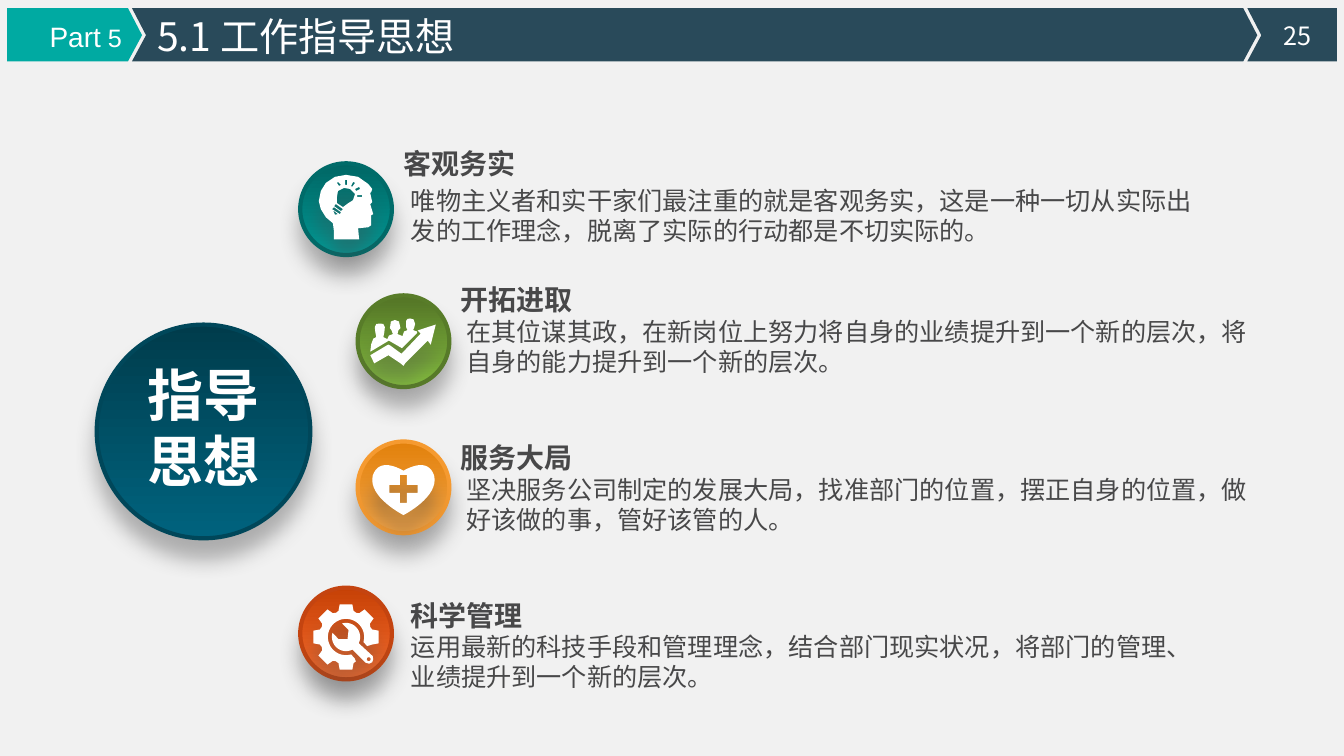
"""Build the slide 5.1 on the guiding ideas of the work."""
from math import cos, radians, sin

from lxml import etree
from pptx import Presentation
from pptx import util as u
from pptx.dml.color import RGBColor
from pptx.enum import shapes, text
from pptx.oxml.ns import qn

WIDTH, HEIGHT = 13.34, 7.5
WHITE, INK, TEAL, NAVY, PAPER = "FFFFFF", "484849", "00AAA2", "294A5A", "F1F1F1"
SANS = "Noto Sans CJK SC"
TOP, MIDDLE, BOTTOM = 0.08, 0.35, 0.61
BADGE = 0.91
BODY_BOX, HEADING_BOX = (8.04, 0.71), (2.18, 0.44)

HEADER = [
    (TEAL, [(0.07, TOP), (1.27, TOP), (1.41, MIDDLE), (1.27, BOTTOM), (0.07, BOTTOM)]),
    (NAVY, [(1.31, TOP), (12.34, TOP), (12.48, MIDDLE), (12.34, BOTTOM),
            (1.31, BOTTOM), (1.45, MIDDLE)]),
    (NAVY, [(12.38, TOP), (13.27, TOP), (13.27, BOTTOM), (12.38, BOTTOM), (12.52, MIDDLE)]),
]


def arc(radius, start, end, x=0, y=0, step=6):
    """Return points along a clockwise or anticlockwise arc."""
    count = max(2, round(abs(end - start) / step))
    angles = [radians(start + (end - start) * i / count) for i in range(count + 1)]
    return [(x + radius * cos(a), y + radius * sin(a)) for a in angles]


def bezier(a, b, c, d, count=16):
    """Return points along a cubic curve."""
    shares = [i / count for i in range(count + 1)]
    return [tuple((1 - t) ** 3 * p + 3 * t * (1 - t) ** 2 * q + 3 * t * t * (1 - t) * r + t ** 3 * s
                  for p, q, r, s in zip(a, b, c, d)) for t in shares]


def heart():
    """Return a heart with a cross cut out of it."""
    right = bezier((0, -16.5), (3.5, -18.5), (24.5, -30.5), (30.5, -11.5))
    right += bezier((30.5, -11.5), (35.5, 9.5), (0, 27.5), (0, 27.5))
    left = [(-x, y) for x, y in reversed(right)]
    cross = [(14, 5.5), (3.5, 5.5), (3.5, 15.5), (-3.5, 15.5), (-3.5, 5.5), (-14, 5.5),
             (-14, -2.5), (-3.5, -2.5), (-3.5, -12.5), (3.5, -12.5), (3.5, -2.5), (14, -2.5)]
    return [right + left, cross]


def gear():
    """Return a gear, open at lower right, around a wrench."""
    tooth = [(-22, 26), (-16, 27), (-11, 33), (11, 33), (16, 27)]
    rim = [(r * cos(radians(a + turn)), r * sin(radians(a + turn)))
           for turn in range(90, 361, 45) for a, r in tooth]
    wheel = rim + [(21, 9)] + arc(18, 16, -286) + [(8.5, 21)]
    wrench = ([(26.5, 19)] + arc(14, 26, -106)
              + [(2.5, -7), (1.5, 2), (-7.5, 2)] + arc(14, 197, 63)
              + [(19.5, 25.5), (23, 26.5), (26, 25), (27, 22)])
    return [[(x, y + 3.5) for x, y in part]
            for part in (wheel, wrench, arc(2, 0, 360, 22.5, 22, 30))]


HEAD = [
    [(-12, 30), (-12, 22), (-13, 14), (-20, 8), (-25, 0), (-27, -8), (-25, -18), (-20, -26),
     (-11, -32), (0, -34), (12, -32), (22, -25), (26, -20), (25, -17), (24, -16), (26, -7),
     (24, -5), (27, 5), (25, 6), (25, 16), (22, 18), (12, 19), (13, 30)],
    [(4, -20), (-2, -21), (-8, -18), (-9, -12), (-9, -6), (-3, -2), (1, -5), (7, -9), (9, -15)],
    [(-10, -5), (-3, 0), (-5, 2), (-12, -3)],
    [(-12, -2), (-5, 3), (-6, 5), (-14, 0)],
    [(-13, 1), (-8, 5), (-11, 5.5)],
    [(6, -22), (9, -26), (7, -27), (5, -23)],
    [(10, -18), (14, -20), (13, -22), (9, -20)],
    [(1, -24), (1, -29), (-1, -29), (-1, -24)],
    [(-5, -24), (-8, -27), (-9, -26), (-7, -23)],
    [(11, -12), (16, -12), (16, -14), (11, -14)],
]
GROWTH = [
    [(-33, 10.5), (-32, 3), (-30, -2.5), (-27, -4), (-28, -9), (-28.5, -14), (-27, -17),
     (-23.5, -17.5), (-20, -17), (-18.5, -14), (-19, -9), (-20, -4), (-16, -2), (-14.5, -5.5),
     (-10.5, -7), (-12, -11), (-13.5, -13), (-12.5, -19.5), (-8.5, -21), (-4.5, -19.5),
     (-3, -13), (-5, -11), (-6, -7), (-1, -5), (0.5, -9.5), (4, -11), (2.5, -14), (2.5, -20),
     (4, -22), (6.5, -22.5), (10, -21.5), (11.5, -17), (10.5, -13), (9.5, -11), (13.5, -9.5),
     (13.5, -8), (-1.5, 7), (-14.5, -0.5)],
    [(-33, 14), (-29, 22), (-15, 14), (-3, 22), (0, 24.5), (2, 21.5), (24, -0.5), (27, 3.5),
     (32, -16.5), (14, -10.5), (17, -7.5), (-2, 12.5), (-13, 4.5), (-15, 3.5), (-17, 4.5)],
]
IDEAS = [
    ("客观务实", "唯物主义者和实干家们最注重的就是客观务实，这是一种一切从实际出发的工作理念，脱离了实际的行动都是不切实际的。",
     HEAD, ("006664", "009A96", "006B69"), (2.98, 1.62), (3.91, 1.38), (3.98, 1.77)),
    ("开拓进取", "在其位谋其政，在新岗位上努力将自身的业绩提升到一个新的层次，将自身的能力提升到一个新的层次。",
     GROWTH, ("537426", "83BC3E", "587C29"), (3.55, 2.93), (4.47, 2.73), (4.53, 3.07)),
    ("服务大局", "坚决服务公司制定的发展大局，找准部门的位置，摆正自身的位置，做好该做的事，管好该管的人。",
     heart(), ("E2810C", "F5A545", "F59A30"), (3.55, 4.38), (4.47, 4.3), (4.53, 4.64)),
    ("科学管理", "运用最新的科技手段和管理理念，结合部门现实状况，将部门的管理、业绩提升到一个新的层次。",
     gear(), ("C64106", "F86B2C", "C44410"), (2.98, 5.83), (3.98, 5.87), (3.98, 6.2)),
]


def rgb(value):
    """Turn a hex string into a colour."""
    return RGBColor.from_string(value)


def inches(*values):
    """Turn numbers into lengths."""
    return [u.Inches(v) for v in values]


def write(frame, runs, size=18, color=WHITE, bold=False, font=SANS, align="LEFT"):
    """Fill a text frame with (text, size) runs or with one string."""
    runs = [(runs, size)] if isinstance(runs, str) else runs
    frame.word_wrap = True
    frame.auto_size = text.MSO_AUTO_SIZE.NONE
    frame.vertical_anchor = text.MSO_ANCHOR.TOP
    frame.margin_left = frame.margin_right = u.Inches(0.1)
    frame.margin_top = u.Inches(0.05) + u.Pt(0.09 * size)
    frame.margin_bottom = 0
    paragraph = frame.paragraphs[0]
    paragraph.alignment = text.PP_ALIGN[align]
    paragraph.line_spacing = u.Pt(round(1.18 * size, 1))
    for words, points in runs:
        run = paragraph.add_run()
        run.text = words
        run.font.size, run.font.bold, run.font.name = u.Pt(points), bold, font
        run.font.color.rgb = rgb(color)
        etree.SubElement(run.font._element, qn("a:ea"), typeface=SANS)


def label(parent, box, words, **style):
    """Add a text box."""
    write(parent.add_textbox(*inches(*box)).text_frame, words, **style)


def cast_shadow(shape):
    """Give a shape a soft shadow below it."""
    effects = etree.SubElement(shape.element.spPr, qn("a:effectLst"))
    outer = etree.SubElement(effects, qn("a:outerShdw"), blurRad=str(u.Pt(15)),
                             dist=str(u.Pt(14)), dir="5400000", algn="t", rotWithShape="0")
    tint = etree.SubElement(outer, qn("a:srgbClr"), val=INK)
    etree.SubElement(tint, qn("a:alpha"), val="40000")


def outline(parent, contours, color, origin=(0, 0), unit=1.0, shadow=False):
    """Add a filled outline; inner contours become holes."""
    fine = [[(x * 1000, y * 1000) for x, y in contour] for contour in contours]
    builder = parent.build_freeform(*fine[0][0], scale=u.Inches(unit) / 1000)
    builder.add_line_segments(fine[0][1:], close=True)
    for hole in fine[1:]:
        builder.move_to(*hole[0])
        builder.add_line_segments(hole[1:], close=True)
    shape = builder.convert_to_shape(*inches(*origin))
    shape.fill.solid()
    shape.fill.fore_color.rgb = rgb(color)
    shape.line.fill.background()
    if shadow:
        cast_shadow(shape)
    else:
        shape.shadow.inherit = False
    return shape


def disc(parent, place, diameter, colors):
    """Add a shaded circle with a rim."""
    shape = parent.add_shape(shapes.MSO_SHAPE.OVAL, *inches(*place, diameter, diameter))
    shape.fill.gradient()
    shape.fill.gradient_angle = 270
    for stop, color in zip(shape.fill.gradient_stops, colors):
        stop.color.rgb = rgb(color)
    shape.line.color.rgb = rgb(colors[2])
    shape.line.width = u.Pt(3)
    cast_shadow(shape)


def main():
    """Lay out the header, the four ideas and the central disc."""
    deck = Presentation()
    deck.slide_width, deck.slide_height = inches(WIDTH, HEIGHT)
    slide = deck.slides.add_slide(deck.slide_layouts[5])
    slide.background.fill.solid()
    slide.background.fill.fore_color.rgb = rgb(PAPER)
    canvas = slide.shapes

    bars = [outline(canvas, [points], color) for color, points in HEADER]
    title = canvas.title
    title.left, title.top, title.width, title.height = inches(1.46, 0.05, 5.51, 0.57)
    write(title.text_frame, "5.1 工作指导思想", size=28)
    bars[-1].element.addnext(title.element)
    label(canvas, (12.61, 0.13, 0.54, 0.4), "25", align="CENTER")
    label(canvas, (0.15, 0.12, 1.16, 0.44), [("Part", 20), (" 5", 18)],
          size=20, font="Arial", align="RIGHT")

    for heading, body, icon, colors, place, heading_at, body_at in IDEAS:
        badge = canvas.add_group_shape().shapes
        disc(badge, place, BADGE, colors)
        centre = [side + BADGE / 2 for side in place]
        outline(badge, icon, WHITE, origin=centre, unit=0.01, shadow=True)
        label(canvas, heading_at + HEADING_BOX, heading, size=20, color=INK, bold=True)
        label(canvas, body_at + BODY_BOX, body, color=INK)

    core = canvas.add_group_shape().shapes
    disc(core, (0.96, 3.22), 2.12, ("003C4C", "00637E", "00475A"))
    label(core, (1.18, 3.49, 1.68, 1.58), "指导思想", size=40, bold=True, align="CENTER")
    deck.save("out.pptx")


if __name__ == "__main__":
    main()
